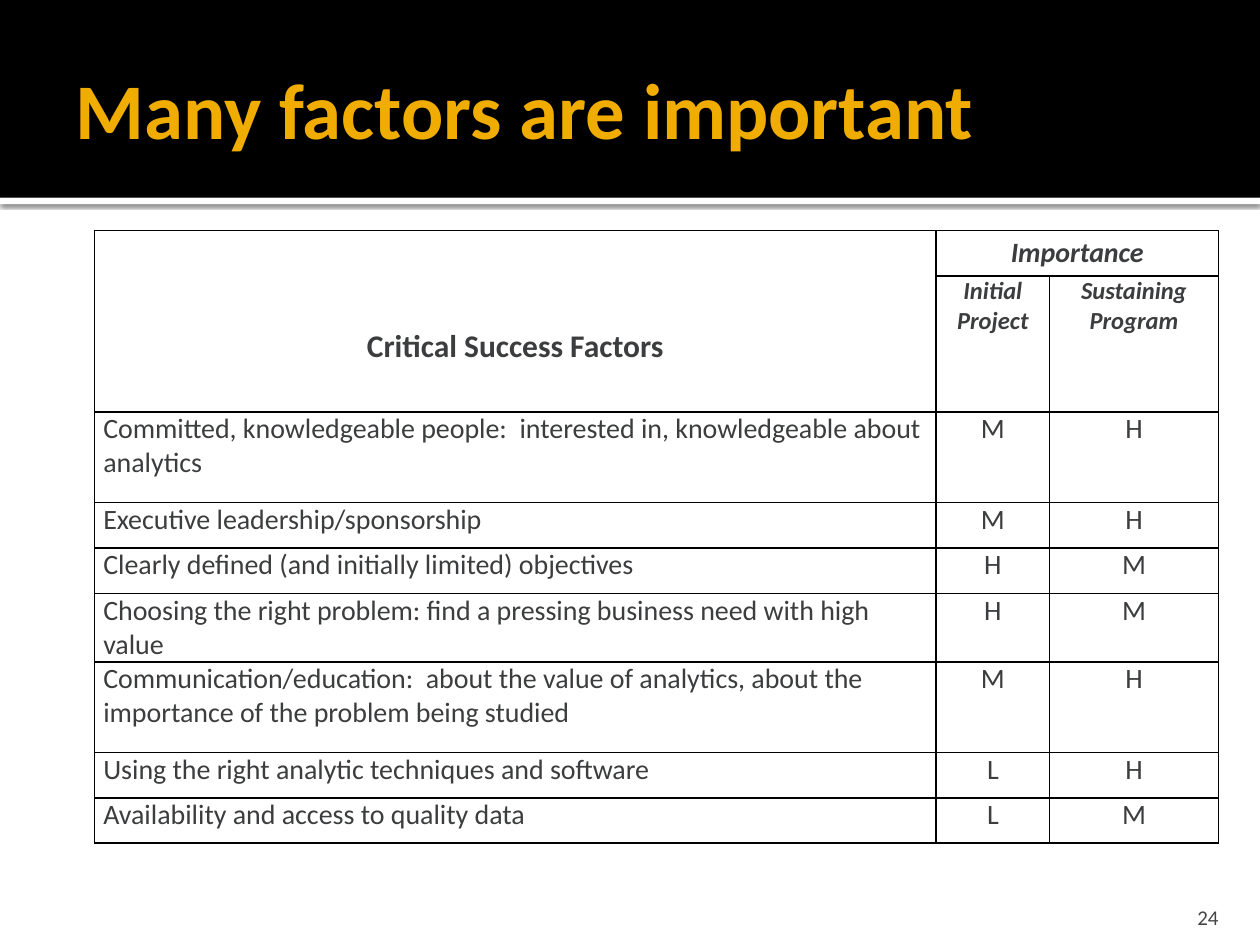
from lxml import etree
from pptx import Presentation
from pptx.dml.color import RGBColor
from pptx.enum.shapes import MSO_SHAPE as Shape
from pptx.enum.text import MSO_ANCHOR as Anchor, PP_ALIGN as Align
from pptx.oxml import parse_xml
from pptx.oxml.ns import nsdecls, qn
from pptx.util import Inches, Pt

FACTORS = [
    ("Committed, knowledgeable people:  interested in, knowledgeable about analytics", "M", "H"),
    ("Executive leadership/sponsorship", "M", "H"),
    ("Clearly defined (and initially limited) objectives", "H", "M"),
    ("Choosing the right problem: find a pressing business need with high value", "H", "M"),
    ("Communication/education:  about the value of analytics, about the importance of the problem being studied", "M", "H"),
    ("Using the right analytic techniques and software", "L", "H"),
    ("Availability and access to quality data", "L", "M"),
]
COLUMNS = [6.68, 0.9, 1.34]
ROWS = [0.36, 1.08, 0.72, 0.36, 0.36, 0.54, 0.72, 0.36, 0.36]
INK = "3C3D3E"


def colour(value):
    return RGBColor.from_string(value)


def inches(box):
    return [Inches(length) for length in box]


def write(frame, words, size, ink=INK, align=Align.LEFT, bold=False, italic=False):
    frame.text = words
    line = frame.paragraphs[0]
    line.alignment = align
    font = line.font
    font.name, font.size, font.bold, font.italic = "Calibri", Pt(size), bold, italic
    font.color.rgb = colour(ink)
    return line


def set_insets(frame, left, top, right, bottom):
    frame.margin_left, frame.margin_top, frame.margin_right, frame.margin_bottom = inches(
        (left, top, right, bottom))


def add_band(slide, box, fill, depth):
    band = slide.shapes.add_shape(Shape.RECTANGLE, *inches(box))
    band.shadow.inherit = False
    band.fill.solid()
    band.fill.fore_color.rgb = colour(fill)
    band.line.fill.background()
    slide.shapes.element.insert(2 + depth, band.element)
    return band


def add_header(slide, box):
    left, top, width, height = box
    rule = add_band(slide, (left, top + height, width, 0.05), "FFFFFF", 0)
    effects = rule.element.spPr.find(qn("a:effectLst"))
    effects.append(parse_xml(
        f'<a:outerShdw {nsdecls("a")} blurRad="{Pt(2.5)}" dist="{Pt(0.8)}" dir="5400000" '
        'rotWithShape="0"><a:srgbClr val="000000"><a:alpha val="60000"/></a:srgbClr></a:outerShdw>'))
    add_band(slide, box, "000000", 1)

    title = slide.shapes.title
    title.left, title.top, title.width, title.height = inches(
        (left + 0.5, top + 0.17, width - 1, height - 0.2))
    frame = title.text_frame
    set_insets(frame, 0.1, 0.05, 0.05, 0.05)
    frame.vertical_anchor = Anchor.MIDDLE
    write(frame, "Many factors are important", 45, "F0AD00", bold=True)


def add_borders(cell):
    properties = cell._tc.get_or_add_tcPr()
    for position, side in enumerate(("lnL", "lnR", "lnT", "lnB")):
        border = etree.Element(qn(f"a:{side}"), w=str(Pt(1)))
        fill = etree.SubElement(border, qn("a:solidFill"))
        etree.SubElement(fill, qn("a:srgbClr"), val="000000")
        properties.insert(position, border)


def fill_cell(cell, words, size=16, anchor=Anchor.TOP, **style):
    line = write(cell.text_frame, words, size, **style)
    line.space_after = Pt(9)
    cell.vertical_anchor = anchor


def add_factor_table(slide, left, top):
    box = inches((left, top, sum(COLUMNS), sum(ROWS)))
    table = slide.shapes.add_table(len(ROWS), len(COLUMNS), *box).table
    table.first_row = table.horz_banding = False
    for column, width in zip(table.columns, COLUMNS):
        column.width = Inches(width)
    for row, height in zip(table.rows, ROWS):
        row.height = Inches(height)
    for cell in table.iter_cells():
        set_insets(cell, 0.07, 0, 0.07, 0)
        cell.fill.background()
        add_borders(cell)

    heading, importance = table.cell(0, 0), table.cell(0, 1)
    heading.merge(table.cell(1, 0))
    importance.merge(table.cell(0, 2))
    heading.margin_top = Inches(0.4)
    header = {"align": Align.CENTER, "bold": True}
    fill_cell(heading, "Critical Success Factors", 18, Anchor.MIDDLE, **header)
    fill_cell(importance, "Importance", 16, Anchor.MIDDLE, italic=True, **header)
    for column, stage in enumerate(("Initial Project", "Sustaining Program"), 1):
        fill_cell(table.cell(1, column), stage, 14, italic=True, **header)
    for row, (factor, *ratings) in enumerate(FACTORS, 2):
        fill_cell(table.cell(row, 0), factor)
        for column, rating in enumerate(ratings, 1):
            fill_cell(table.cell(row, column), rating, align=Align.CENTER)


def add_page_number(slide, box):
    frame = slide.shapes.add_textbox(*inches(box)).text_frame
    frame.word_wrap = True
    frame.vertical_anchor = Anchor.BOTTOM
    set_insets(frame, 0.1, 0.05, 0.1, 0)
    write(frame, "24", 12, "454545", Align.RIGHT)


def main():
    deck = Presentation()
    deck.slide_width, deck.slide_height = inches((10, 7.5))
    slide = deck.slides.add_slide(deck.slide_layouts[5])
    add_header(slide, (0, 0, 10, 1.57))
    add_factor_table(slide, 0.75, 1.83)
    add_page_number(slide, (8.97, 7.08, 0.8, 0.3))
    deck.save("out.pptx")


if __name__ == "__main__":
    main()
